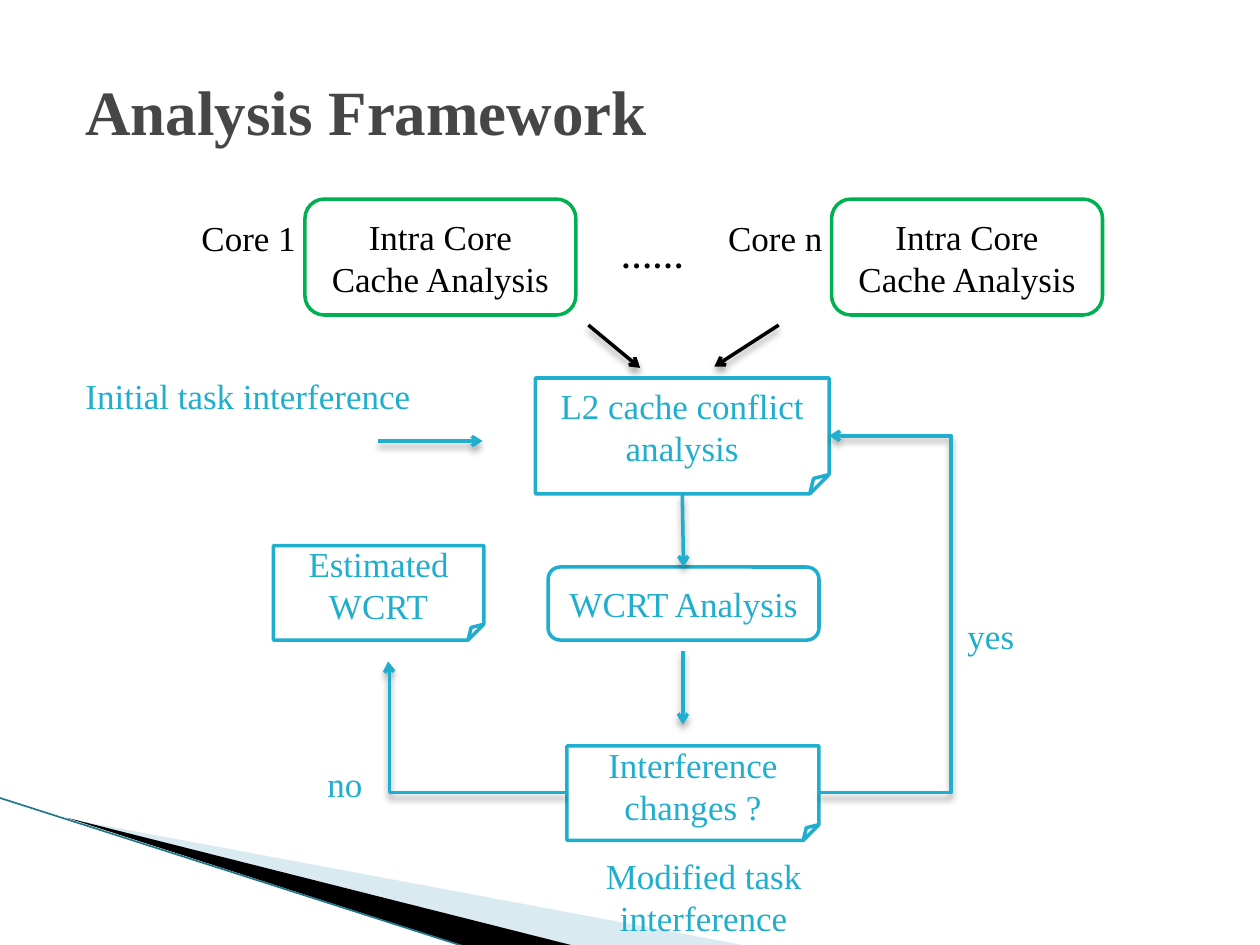
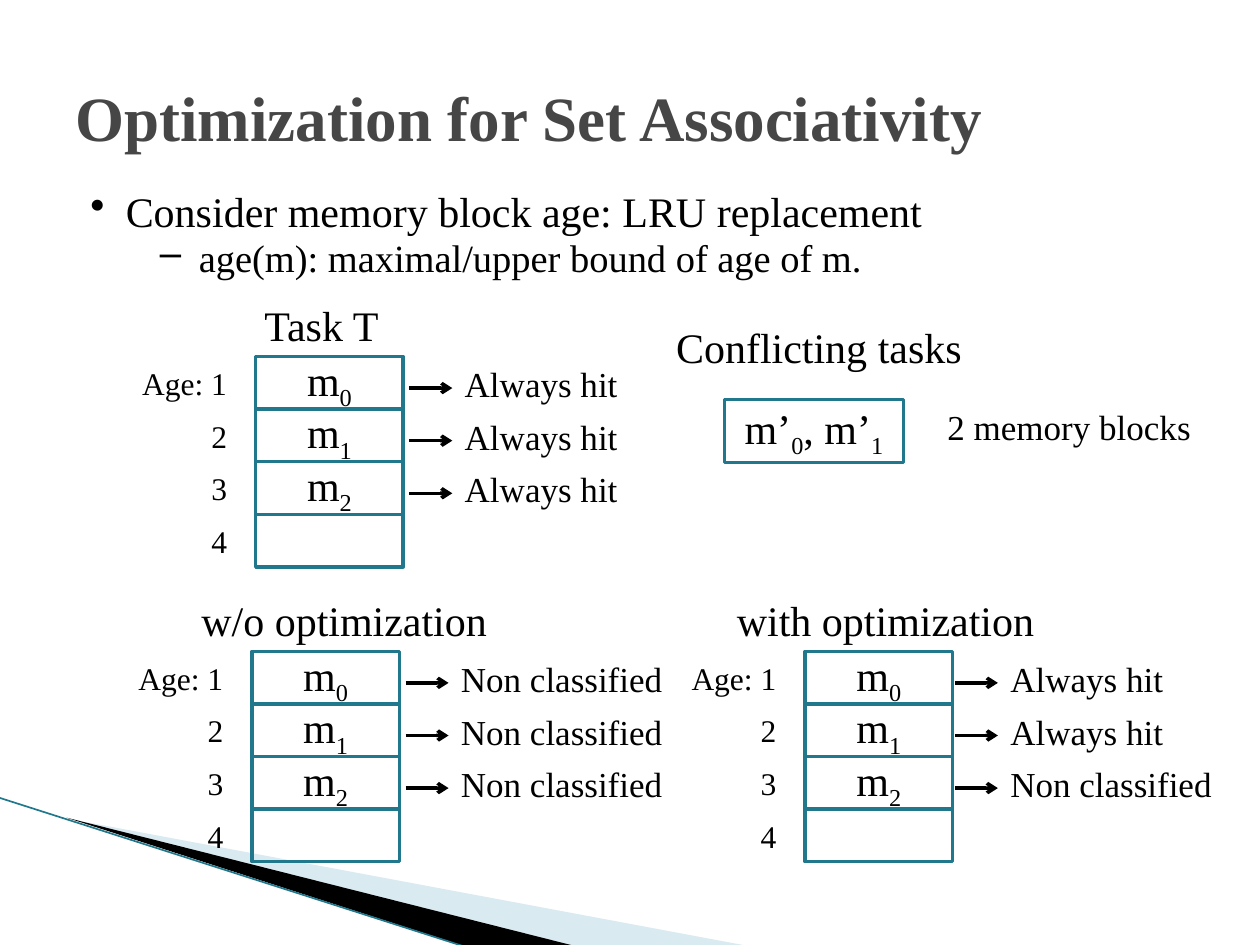
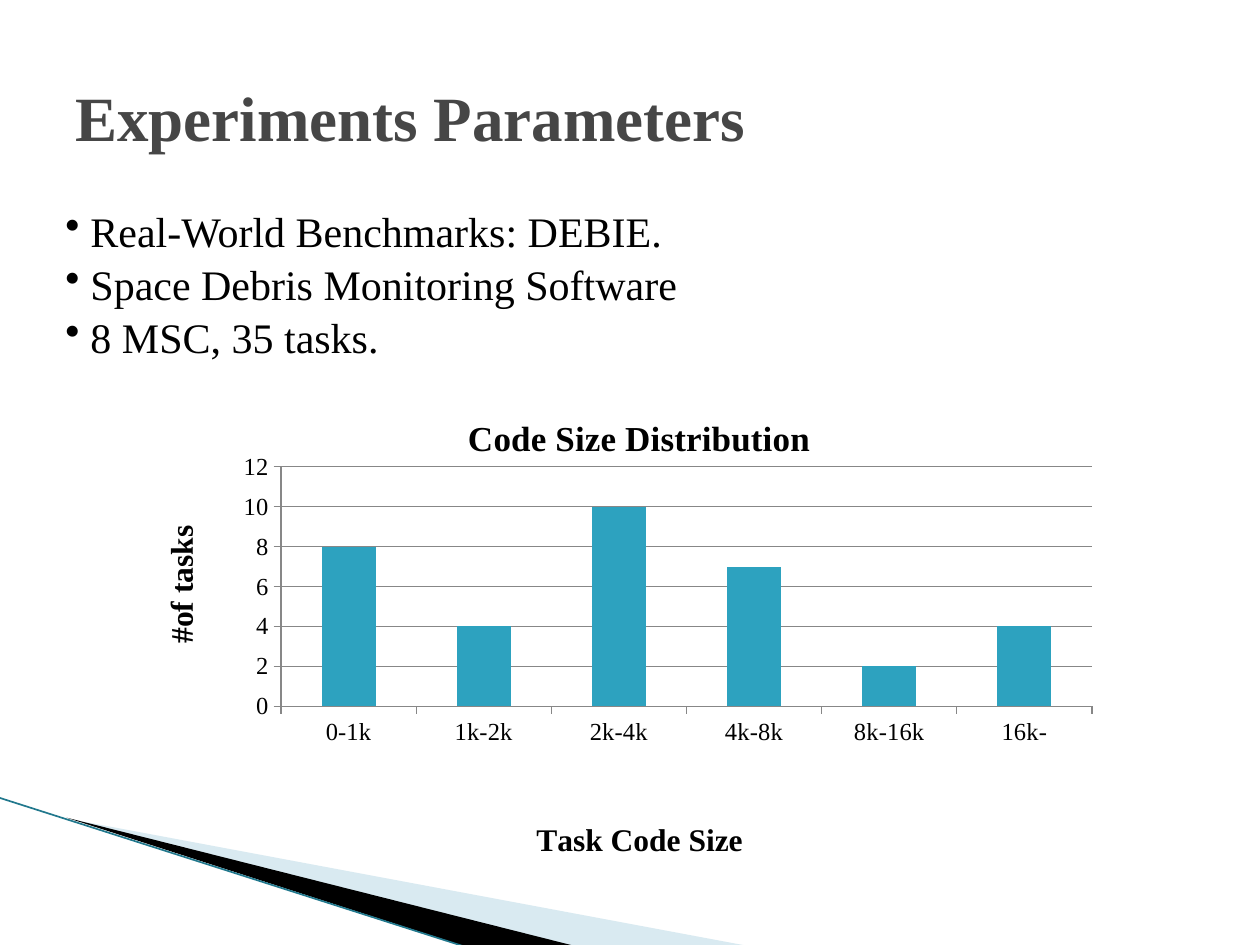
from lxml import etree
from pptx import Presentation
from pptx.chart.data import CategoryChartData
from pptx.dml.color import RGBColor
from pptx.enum.chart import XL_CHART_TYPE, XL_TICK_MARK
from pptx.enum.shapes import MSO_CONNECTOR, MSO_SHAPE
from pptx.enum.text import MSO_ANCHOR, PP_ALIGN
from pptx.oxml.ns import qn
from pptx.util import Inches, Pt

STRAIGHT, ELBOW = MSO_CONNECTOR.STRAIGHT, MSO_CONNECTOR.ELBOW
RECT, ROUND, FOLDED = MSO_SHAPE.RECTANGLE, MSO_SHAPE.ROUNDED_RECTANGLE, MSO_SHAPE.FOLDED_CORNER
LEFT, CENTER, RIGHT = PP_ALIGN.LEFT, PP_ALIGN.CENTER, PP_ALIGN.RIGHT
TOP, MIDDLE = MSO_ANCHOR.TOP, MSO_ANCHOR.MIDDLE
COLUMN, OUTSIDE = XL_CHART_TYPE.COLUMN_CLUSTERED, XL_TICK_MARK.OUTSIDE

FONT = "Times New Roman"
COLORS = {
    "black": "000000",
    "title": "464646",
    "flow": "1FAECD",
    "core": "00B050",
    "cell": "21788D",
    "wedge": "A0CBDC",
    "bar": "2DA2BF",
    "axis": "878787",
}


def rgb(name):
    return RGBColor.from_string(COLORS[name])


def set_font(font, size, color="black", bold=False):
    font.name = FONT
    font.size = Pt(size)
    font.bold = bold
    font.color.rgb = rgb(color)


def write(tf, text, size=20, color="black", bold=False, align=LEFT, anchor=TOP,
          bullet=None, indent=0.0, hang=0.0, before=0, wrap=True):
    tf.word_wrap = wrap
    tf.vertical_anchor = anchor
    for i, line in enumerate(text.split("\n")):
        p = tf.add_paragraph() if i else tf.paragraphs[0]
        p.alignment = align
        if i and before:
            p.space_before = Pt(before)
        if bullet:
            pPr = p._p.get_or_add_pPr()
            pPr.set("marL", str(Inches(indent)))
            pPr.set("indent", str(-Inches(hang)))
            etree.SubElement(pPr, qn("a:buChar")).set("char", bullet)
        for j, part in enumerate(line.split("|")):
            if not part:
                continue
            r = p.add_run()
            r.text = part
            set_font(r.font, size, color, bold)
            if j % 2:
                r._r.get_or_add_rPr().set("baseline", "-25000")


def add_text(s, text, x, y, w, h, **fmt):
    sp = s.shapes.add_textbox(Inches(x), Inches(y), Inches(w), Inches(h))
    write(sp.text_frame, text, **fmt)
    return sp


def add_box(s, text, x, y, w, h, shape=RECT, line="flow", **fmt):
    sp = s.shapes.add_shape(shape, Inches(x), Inches(y), Inches(w), Inches(h))
    sp.shadow.inherit = False
    sp.fill.background()
    sp.line.color.rgb = rgb(line)
    sp.line.width = Pt(2)
    if text:
        write(sp.text_frame, text, align=CENTER, anchor=MIDDLE, **fmt)
    return sp


def add_line(s, start, end, color="black", width=2, head=True, shadow=False, via_x=None):
    kind = STRAIGHT if via_x is None else ELBOW
    c = s.shapes.add_connector(kind, *(Inches(v) for v in start + end))
    c.line.color.rgb = rgb(color)
    c.line.width = Pt(width)
    if head:
        etree.SubElement(c.line._get_or_add_ln(), qn("a:tailEnd")).set("type", "arrow")
    effects = etree.SubElement(c._element.spPr, qn("a:effectLst"))
    if shadow:
        outer = etree.SubElement(effects, qn("a:outerShdw"), blurRad=str(Pt(4)),
                                 dist=str(Pt(3)), dir="5400000", rotWithShape="0")
        clr = etree.SubElement(outer, qn("a:srgbClr"), val=COLORS["black"])
        etree.SubElement(clr, qn("a:alpha"), val="35000")
    if via_x is not None:
        adj = round((via_x - start[0]) / (end[0] - start[0]) * 100000)
        guides = c._element.spPr.find(qn("a:prstGeom")).get_or_add_avLst()
        etree.SubElement(guides, qn("a:gd"), name="adj1", fmla=f"val {adj}")
    return c


def add_wedge(s, points, color, alpha=None):
    pts = [(Inches(x), Inches(y)) for x, y in points]
    builder = s.shapes.build_freeform(*pts[0])
    builder.add_line_segments(pts[1:], close=True)
    sp = builder.convert_to_shape()
    sp.shadow.inherit = False
    sp.fill.solid()
    sp.fill.fore_color.rgb = rgb(color)
    sp.line.fill.background()
    if alpha:
        clr = sp._element.spPr.find(qn("a:solidFill"))[0]
        etree.SubElement(clr, qn("a:alpha"), val=str(alpha * 1000))


def new_slide(prs, title, x=0.5, y=0.3):
    s = prs.slides.add_slide(prs.slide_layouts[6])
    add_wedge(s, [(0.55, 6.5), (5.95, 7.51), (4.56, 7.51)], "wedge", alpha=40)
    add_wedge(s, [(0.53, 6.49), (4.57, 7.51), (3.72, 7.52)], "black")
    add_line(s, (-0.01, 6.33), (3.71, 7.52), "cell", width=0.95, head=False)
    add_text(s, title, x, y, 9, 1.25, size=36, color="title", bold=True, anchor=MIDDLE)
    return s


def add_core(s, name, x, y):
    add_text(s, name, x, y + 0.09, 1.01, 0.44)
    add_box(s, "Intra Core Cache Analysis", x + 0.92, y, 2.15, 0.92, ROUND, "core")


def add_flow(s, x, y):
    flow = {"color": "flow"}
    arrow = {"color": "flow", "shadow": True}
    conflict = add_box(s, "L2 cache conflict analysis", x + 2.08, y, 2.33, 0.92, FOLDED, **flow)
    wcrt = add_box(s, "WCRT Analysis", x + 2.18, y + 1.5, 2.15, 0.58, ROUND, **flow)
    add_box(s, "Interference changes ?", x + 2.33, y + 2.92, 2, 0.75, FOLDED, **flow)
    add_box(s, "Estimated WCRT", x, y + 1.33, 1.67, 0.75, FOLDED, **flow)

    mid = x + 3.25
    down = add_line(s, (mid, y + 0.92), (mid, y + 1.5), **arrow)
    down.begin_connect(conflict, 2)
    down.end_connect(wcrt, 0)
    add_line(s, (mid, y + 2.17), (mid, y + 2.75), **arrow)
    add_line(s, (x + 0.83, y + 0.5), (x + 1.66, y + 0.5), **arrow)
    add_line(s, (x + 4.33, y + 3.29), (x + 4.41, y + 0.46), via_x=x + 5.38, **arrow)
    add_line(s, (x + 2.33, y + 3.29), (x + 0.91, y + 2.25), via_x=x + 0.92, **arrow)

    add_text(s, "Initial task interference", x - 1.59, y - 0.08, 3.08, 0.44, **flow)
    add_text(s, "yes", x + 5.41, y + 1.83, 0.78, 0.44, **flow)
    add_text(s, "no", x + 0.33, y + 3, 0.48, 0.44, wrap=False, **flow)
    add_text(s, "Modified task\ninterference", x + 2.33, y + 3.73, 2.17, 0.77,
             align=CENTER, **flow)


def framework_slide(prs):
    s = new_slide(prs, "Analysis Framework", 0.58, 0.25)
    add_core(s, "Core 1", 1.5, 1.58)
    add_core(s, "Core n", 5.68, 1.58)
    add_text(s, "……", 4.83, 1.83, 0.75, 0.4, size=18, bold=True)
    add_line(s, (4.67, 2.58), (5.08, 2.92), shadow=True)
    add_line(s, (6.18, 2.58), (5.67, 2.91), shadow=True)
    add_flow(s, 2.17, 3)


def add_cache_set(s, title, title_x, x, y, verdicts, gap=0.05):
    row = 1.67 / 4
    width = 1.17
    add_text(s, title, title_x, y - 0.5, 2.67, 0.5, size=24)
    for i in range(4):
        top = y + i * row
        block = f"m|{i}" if i < len(verdicts) else ""
        age = f"Age: {i + 1}" if i == 0 else str(i + 1)
        add_box(s, block, x, top, width, row, line="cell", size=24)
        add_text(s, age, x - 1.08, top + 0.01, 0.95, 0.4, size=18, align=RIGHT)
    for i, verdict in enumerate(verdicts):
        top = y + i * row
        start = x + width + gap
        add_line(s, (start, top + 0.25), (start + 0.34, top + 0.25))
        add_text(s, verdict, start + 0.34, top, 2, 0.44)


def optimization_slide(prs):
    s = new_slide(prs, "Optimization for Set Associativity")
    add_text(s, "Consider memory block age: LRU replacement", 0.5, 1.42, 9, 0.5,
             size=24, bullet="•", indent=0.4, hang=0.28)
    add_text(s, "age(m): maximal/upper bound of age of m.", 0.67, 1.81, 7.08, 0.43,
             size=22, bullet="–", indent=0.81, hang=0.31)
    hit, unknown = "Always hit", "Non classified"
    add_cache_set(s, "Task T", 2, 2.03, 2.83, [hit] * 3)
    add_cache_set(s, "w/o optimization", 1.5, 2, 5.17, [unknown] * 3)
    add_cache_set(s, "with optimization", 5.75, 6.39, 5.17, [hit, hit, unknown], gap=0.02)
    add_text(s, "Conflicting tasks", 5.25, 2.5, 2.5, 0.5, size=24, align=CENTER)
    add_box(s, "m’|0|, m’|1", 5.75, 3.17, 1.42, 0.5, line="cell", size=24)
    add_text(s, "2 memory blocks", 7.42, 3.17, 2.25, 0.44)


def set_layout(el, index, **values):
    for old in el.findall(qn("c:layout")):
        el.remove(old)
    layout = etree.Element(qn("c:layout"))
    manual = etree.SubElement(layout, qn("c:manualLayout"))
    if "w" in values:
        etree.SubElement(manual, qn("c:layoutTarget"), val="inner")
    for key in ("x", "y"):
        etree.SubElement(manual, qn(f"c:{key}Mode"), val="edge")
    for key, value in values.items():
        etree.SubElement(manual, qn(f"c:{key}"), val=str(value))
    el.insert(index, layout)


def set_chart_title(title, text, size, x, y):
    write(title.text_frame, text, size=size, bold=True, align=CENTER)
    set_layout(title._element, 1, x=x, y=y)


def add_code_size_chart(s, x, y, w, h):
    data = CategoryChartData()
    data.categories = ["0-1k", "1k-2k", "2k-4k", "4k-8k", "8k-16k", "16k-"]
    data.add_series("Series 1", [8, 4, 10, 7, 2, 4])
    frame = s.shapes.add_chart(COLUMN, Inches(x), Inches(y), Inches(w), Inches(h), data)
    chart = frame.chart
    set_font(chart.font, 14)
    chart.has_legend = False
    chart.has_title = True
    set_chart_title(chart.chart_title, "Code Size Distribution", 20, 0.33, 0.06)
    set_layout(chart._chartSpace.chart.plotArea, 0, x=0.147, y=0.169, w=0.822, h=0.456)

    plot = chart.plots[0]
    plot.vary_by_categories = False
    plot.gap_width = 150
    fill = plot.series[0].format.fill
    fill.solid()
    fill.fore_color.rgb = rgb("bar")

    cat, val = chart.category_axis, chart.value_axis
    for axis in (cat, val):
        axis.major_tick_mark = OUTSIDE
        axis.format.line.color.rgb = rgb("axis")
        set_font(axis.tick_labels.font, 14)
    set_chart_title(cat.axis_title, "Task Code Size", 18, 0.4, 0.83)
    set_chart_title(val.axis_title, "#of tasks", 18, 0.02, 0.27)
    val.axis_title.text_frame._txBody.bodyPr.set("rot", "-5400000")
    val.minimum_scale, val.maximum_scale, val.major_unit = 0, 12, 2
    val.has_major_gridlines = True
    val.major_gridlines.format.line.color.rgb = rgb("axis")


def experiments_slide(prs):
    s = new_slide(prs, "Experiments Parameters")
    add_text(s, "Real-World Benchmarks: DEBIE.\nSpace Debris Monitoring Software\n8 MSC, 35 tasks.",
             0.42, 1.58, 7.83, 1.3, size=24, bullet="•", indent=0.2, hang=0.2, before=1.5)
    add_code_size_chart(s, 1.08, 3, 7.83, 4.17)


def main():
    prs = Presentation()
    prs.slide_width, prs.slide_height = Inches(10), Inches(7.5)
    framework_slide(prs)
    optimization_slide(prs)
    experiments_slide(prs)
    prs.save("out.pptx")


if __name__ == "__main__":
    main()
